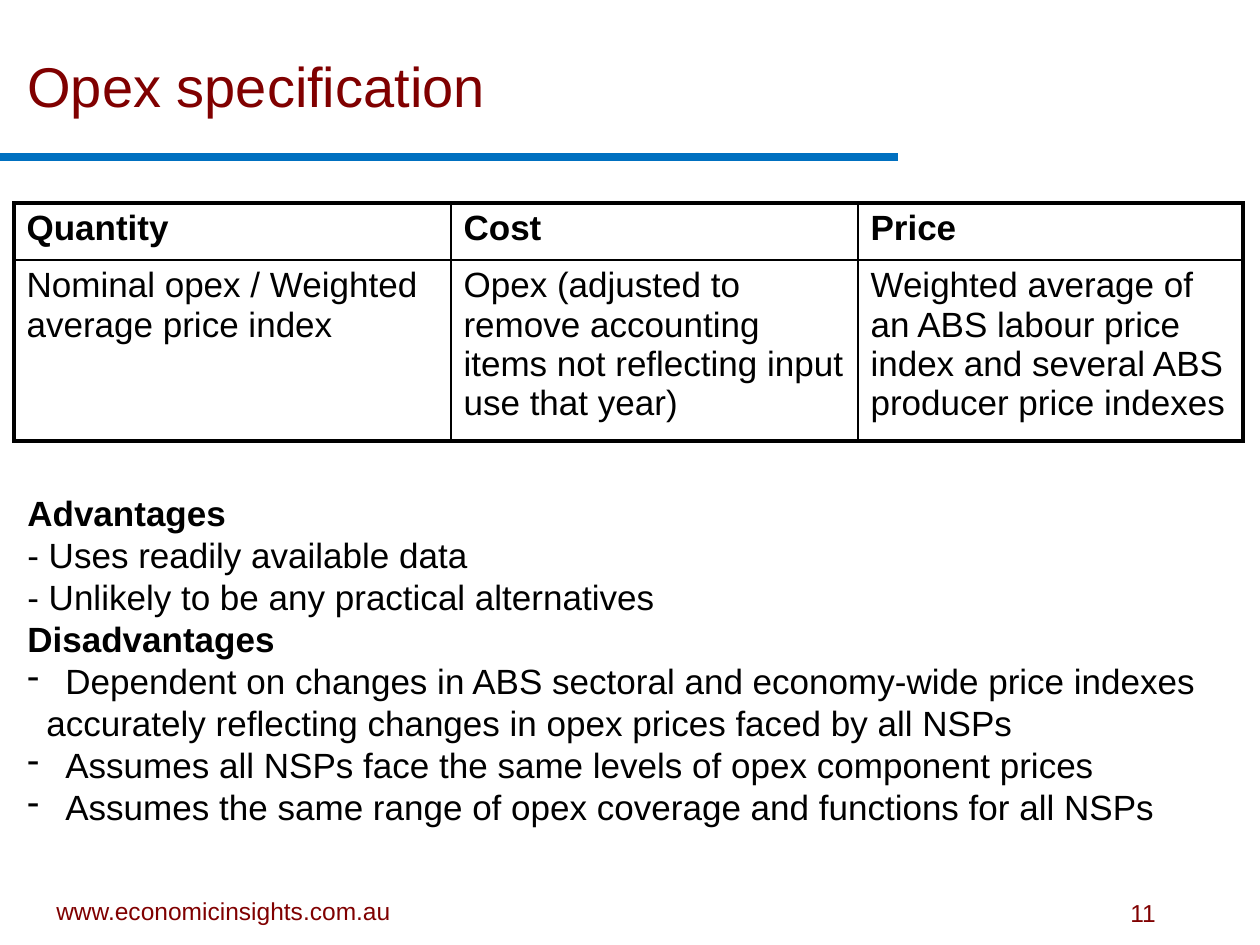
from typing import NamedTuple

from lxml import etree
from pptx import Presentation
from pptx.dml.color import RGBColor
from pptx.enum.shapes import MSO_CONNECTOR
from pptx.enum.text import MSO_ANCHOR, PP_ALIGN
from pptx.oxml.ns import qn
from pptx.util import Emu, Pt

SCALE = 914400 / 126
LEFT, CENTER = PP_ALIGN.LEFT, PP_ALIGN.CENTER
TOP, BOTTOM = MSO_ANCHOR.TOP, MSO_ANCHOR.BOTTOM
STRAIGHT = MSO_CONNECTOR.STRAIGHT
FONT = "Arial"
COLORS = {"text": "000000", "brand": "800000", "rule": "0070C0"}
THIN, THICK = 1, 2.25


class Line(NamedTuple):
    text: str
    bold: bool = False
    indent: int = 0
    bullet: str = ""


class Label(NamedTuple):
    box: tuple[int, int, int, int]
    lines: list[Line]
    size: int
    color: str = "brand"
    anchor: MSO_ANCHOR = BOTTOM
    align: PP_ALIGN = LEFT
    pitch: int | None = None


LABELS = [
    Label((15, 45, 912, 80), [Line("Opex specification")], 32),
    Label((25, 890, 397, 42), [Line("www.economicinsights.com.au")], 14,
          align=CENTER),
    Label((1118, 892, 56, 42), [Line("11")], 14, anchor=TOP),
    Label((15, 485, 1211, 349), [
        Line("Advantages", bold=True),
        Line("- Uses readily available data"),
        Line("- Unlikely to be any practical alternatives"),
        Line("Disadvantages", bold=True),
        Line("Dependent on changes in ABS sectoral and economy-wide price "
             "indexes", indent=38, bullet="-"),
        Line("accurately reflecting changes in opex prices faced by all NSPs",
             indent=19),
        Line("Assumes all NSPs face the same levels of opex component prices",
             indent=38, bullet="-"),
        Line("Assumes the same range of opex coverage and functions for all "
             "NSPs", indent=38, bullet="-"),
    ], 20, "text", pitch=24),
]

COLS, ROWS = [437, 407, 385], [57, 181]
CELLS = [
    [[Line(name, bold=True)] for name in ("Quantity", "Cost", "Price")],
    [
        [Line("Nominal opex / Weighted"), Line("average price index")],
        [Line("Opex (adjusted to remove accounting items not reflecting "
              "input use that year)")],
        [Line("Weighted average of an ABS labour price index and several "
              "ABS producer price indexes")],
    ],
]


def px(n: int) -> Emu:
    return Emu(round(n * SCALE))


def rgb(name: str) -> RGBColor:
    return RGBColor.from_string(COLORS[name])


def write(frame, lines: list[Line], *, size: int, color: str = "text",
          align: PP_ALIGN = LEFT, pitch: int | None = None) -> None:
    """Fill a text frame, one paragraph a line; pitch is in points."""
    frame.word_wrap = True
    for i, line in enumerate(lines):
        para = frame.add_paragraph() if i else frame.paragraphs[0]
        para.alignment = align
        if pitch:
            para.line_spacing = Pt(pitch)
        props = para._p.get_or_add_pPr()
        if line.indent:
            props.set("marL", str(px(line.indent)))
        if line.bullet:
            props.set("indent", str(px(-line.indent)))
            etree.SubElement(props, qn("a:buChar"), char=line.bullet)
        run = para.add_run()
        run.text = line.text
        font = run.font
        font.name, font.size, font.bold = FONT, Pt(size), line.bold
        font.color.rgb = rgb(color)


def add_label(slide, label: Label) -> None:
    frame = slide.shapes.add_textbox(*map(px, label.box)).text_frame
    frame.vertical_anchor = label.anchor
    write(frame, label.lines, size=label.size, color=label.color,
          align=label.align, pitch=label.pitch)


def add_rule(slide) -> None:
    rule = slide.shapes.add_connector(STRAIGHT, 0, px(157), px(898), px(157))
    rule.line.color.rgb = rgb("rule")
    rule.line.width = Pt(5)
    etree.SubElement(rule._element.spPr, qn("a:effectLst"))


def add_edge(cell, side: str, width: float) -> None:
    edge = etree.SubElement(cell._tc.get_or_add_tcPr(), qn(f"a:ln{side}"),
                            w=str(Pt(width)))
    fill = etree.SubElement(edge, qn("a:solidFill"))
    etree.SubElement(fill, qn("a:srgbClr"), val=COLORS["text"])


def add_grid(slide) -> None:
    """Table with a thick outer frame and thin inner edges."""
    table = slide.shapes.add_table(
        len(ROWS), len(COLS), px(14), px(203),
        px(sum(COLS)), px(sum(ROWS))).table
    table.first_row = table.horz_banding = False
    for col, width in zip(table.columns, COLS):
        col.width = px(width)
    for row, height in zip(table.rows, ROWS):
        row.height = px(height)
    for r, line in enumerate(CELLS):
        for c, lines in enumerate(line):
            cell = table.cell(r, c)
            outer = {"L": c == 0, "R": c == len(COLS) - 1,
                     "T": r == 0, "B": r == len(ROWS) - 1}
            for side, thick in outer.items():
                add_edge(cell, side, THICK if thick else THIN)
            cell.fill.background()
            write(cell.text_frame, lines, size=20)


def main() -> None:
    deck = Presentation()
    deck.slide_width, deck.slide_height = px(1260), px(945)
    slide = deck.slides.add_slide(deck.slide_layouts[6])
    add_rule(slide)
    add_grid(slide)
    for label in LABELS:
        add_label(slide, label)
    deck.save("out.pptx")


if __name__ == "__main__":
    main()
